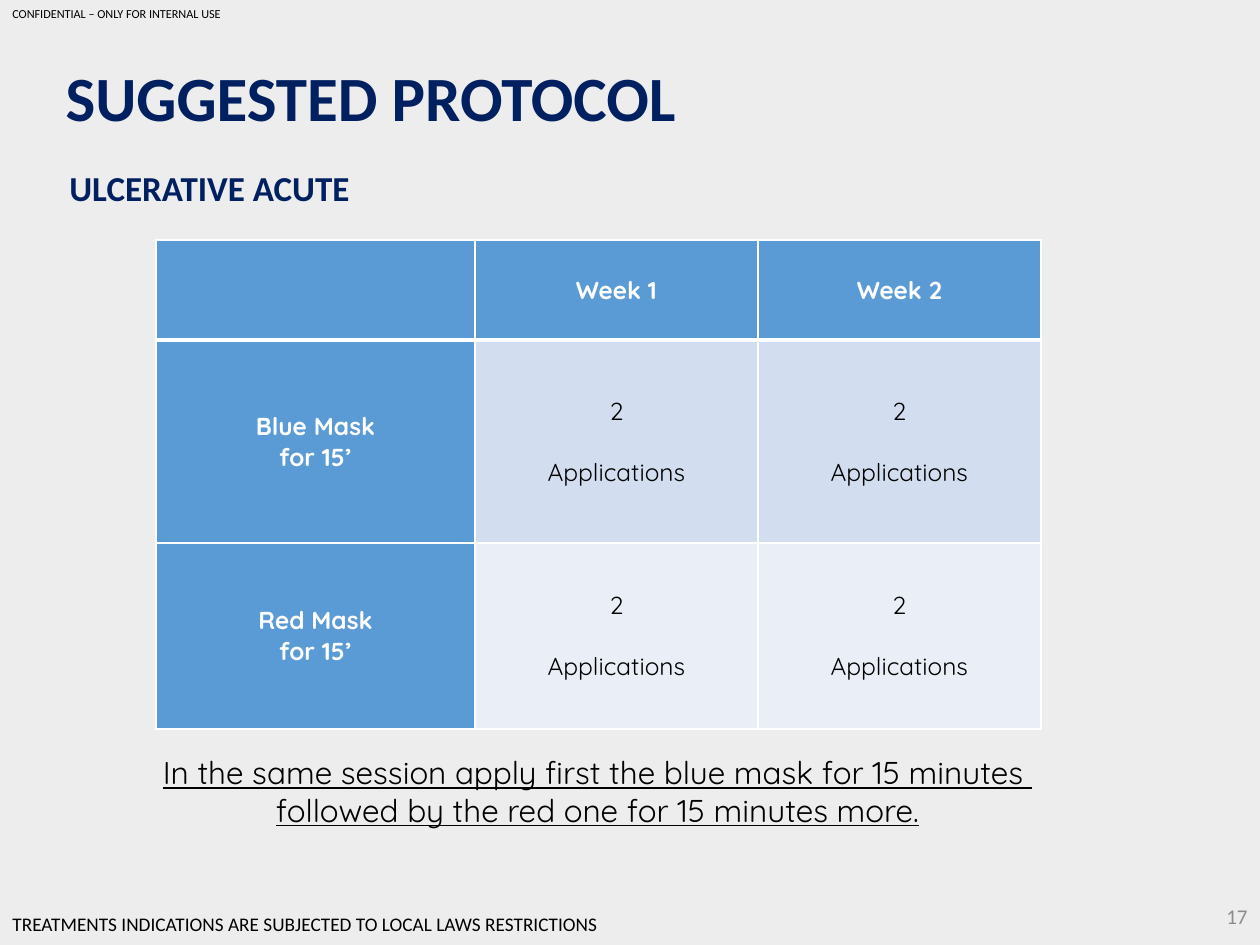
from pptx import Presentation
from pptx.dml.color import RGBColor as RGB
from pptx.enum.text import MSO_ANCHOR as Anchor, PP_ALIGN as Align
from pptx.oxml import parse_xml
from pptx.oxml.ns import nsdecls
from pptx.util import Pt

COLORS = {
    "back": "EDEDED", "navy": "002060", "black": "000000", "white": "FFFFFF",
    "grey": "8C8C8C", "head": "5B9BD5", "band1": "D2DEEF", "band2": "EAEFF7",
}


def px(n):
    return round(n * 914400 / 126)


def color(name):
    return RGB.from_string(COLORS[name])


def write(frame, lines, size, ink, font="Calibri", bold=False, line=False,
          align=Align.LEFT, gap=0):
    """Fill a text frame, one paragraph a line, with gap points between."""
    frame.text = "\n".join(lines)
    for i, para in enumerate(frame.paragraphs):
        para.alignment = align
        if i and gap:
            para.space_before = Pt(gap)
        face = para.font
        face.name, face.size, face.bold = font, Pt(size), bold
        face.underline = line
        face.color.rgb = color(ink)


def label(slide, box, lines, size, ink, wrap=True, anchor=Anchor.TOP, **style):
    frame = slide.shapes.add_textbox(*map(px, box)).text_frame
    frame.word_wrap = wrap
    frame.vertical_anchor = anchor
    write(frame, lines, size, ink, **style)


def heading(slide, box):
    title = slide.shapes.title
    title.left, title.top, title.width, title.height = map(px, box)
    title.text_frame.vertical_anchor = Anchor.TOP
    write(title.text_frame, ["SUGGESTED PROTOCOL"], 36, "navy", bold=True)
    x, y = box[:2]
    label(slide, (x + 4, y + 108, 309, 55), ["ULCERATIVE ACUTE"], 20, "navy",
          wrap=False, bold=True)


def edge(cell, side, width):
    cell._tc.get_or_add_tcPr().append(parse_xml(
        f'<a:ln{side} {nsdecls("a")} w="{Pt(width)}"><a:solidFill>'
        f'<a:srgbClr val="{COLORS["white"]}"/></a:solidFill></a:ln{side}>'))


def schedule(slide, box):
    dose = ["2", "Applications"]
    rows = [
        [[], ["Week 1"], ["Week 2"]],
        [["Blue Mask", "for 15’"], dose, dose],
        [["Red Mask", "for 15’"], dose, dose],
    ]
    table = slide.shapes.add_table(3, 3, *map(px, box)).table
    for col, width in zip(table.columns, (319, 283, 283)):
        col.width = px(width)
    for row, height in zip(table.rows, (100, 203, 186)):
        row.height = px(height)
    for r, row in enumerate(rows):
        for c, lines in enumerate(row):
            cell = table.cell(r, c)
            head = r == 0 or c == 0
            cell.vertical_anchor = Anchor.MIDDLE
            cell.margin_left = cell.margin_right = px(9)
            cell.margin_top = cell.margin_bottom = 0
            # Thick rule under the header row
            for side, width in (("L", 1), ("R", 1), ("T", 3 if r == 1 else 1),
                                ("B", 3 if r == 0 else 1)):
                edge(cell, side, width)
            cell.fill.solid()
            cell.fill.fore_color.rgb = color("head" if head else f"band{r}")
            write(cell.text_frame, lines, 14, "white" if head else "black",
                  font="Quicksand", bold=head, align=Align.CENTER,
                  gap=0 if head else 17.5)


def notices(slide, box):
    x, y, w, h = box
    label(slide, (x, y, 238, 28), ["CONFIDENTIAL – ONLY FOR INTERNAL USE"],
          7, "black", wrap=False)
    label(slide, (x, y + h - 39, 1004, 37),
          ["TREATMENTS INDICATIONS ARE SUBJECTED TO LOCAL LAWS RESTRICTIONS"],
          11, "black")
    label(slide, (x + w - 91, y + h - 54, 91, 50), ["17"], 12, "grey",
          anchor=Anchor.MIDDLE, align=Align.RIGHT)


def main():
    deck = Presentation()
    deck.slide_width, deck.slide_height = px(1260), px(945)
    slide = deck.slides.add_slide(deck.slide_layouts[5])
    slide.background.fill.solid()
    slide.background.fill.fore_color.rgb = color("back")

    heading(slide, (53, 52, 900, 89))
    schedule(slide, (156, 240, 885, 489))
    # Advice under the table
    label(slide, (125, 747, 945, 89),
          ["In the same session apply first the blue mask for 15 minutes ",
           "followed by the red one for 15 minutes more."],
          18, "black", font="Quicksand", line=True, align=Align.CENTER)
    notices(slide, (0, 0, 1260, 945))
    deck.save("out.pptx")


if __name__ == "__main__":
    main()
